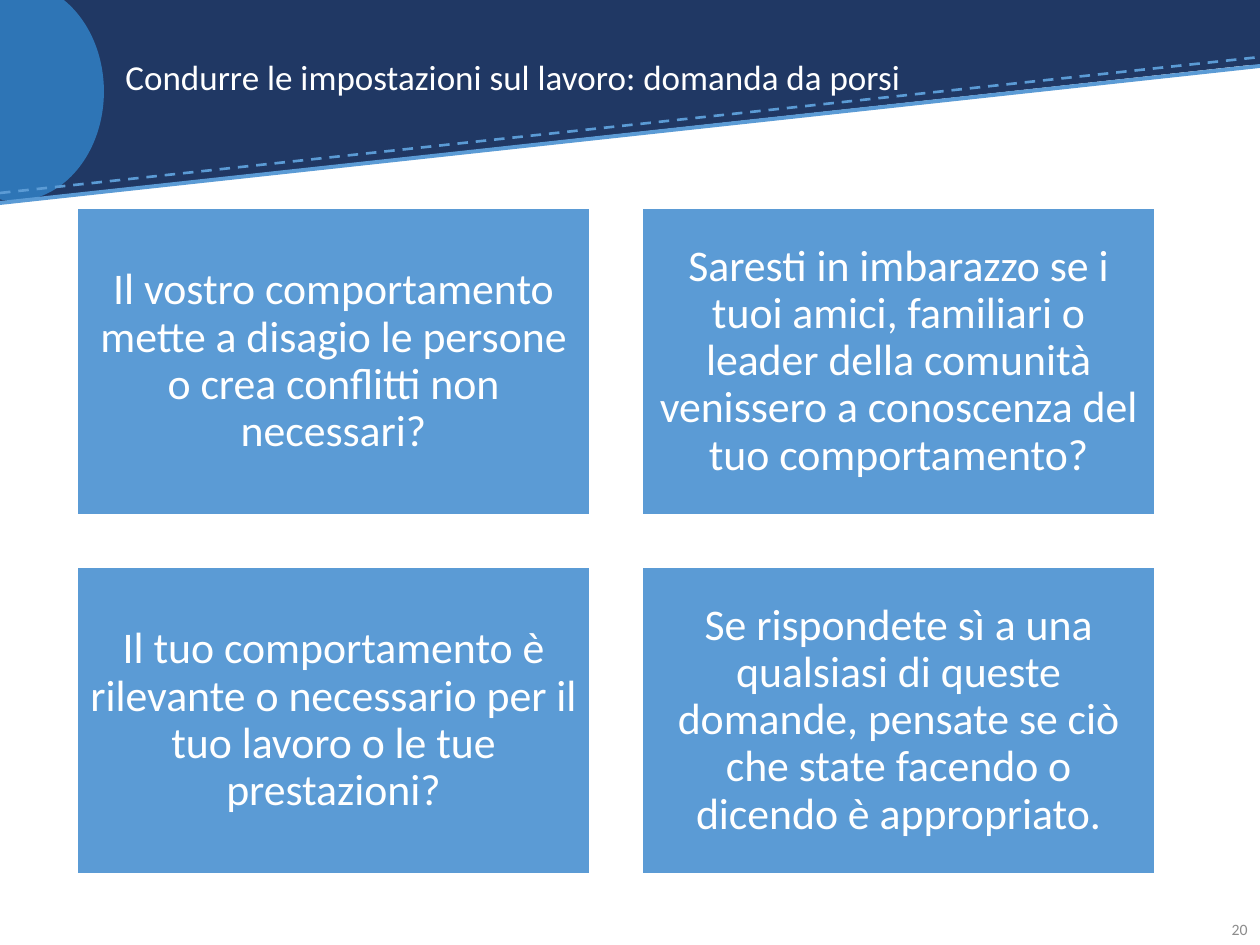
from lxml.etree import SubElement
from pptx import Presentation
from pptx.dml.color import RGBColor
from pptx.enum.dml import MSO_LINE
from pptx.enum.shapes import MSO_CONNECTOR, MSO_SHAPE
from pptx.enum.text import MSO_ANCHOR, PP_ALIGN
from pptx.oxml.ns import qn
from pptx.util import Emu, Pt

PX = 914400 // 126
WIDTH, HEIGHT = 1260, 945

NAVY = RGBColor(0x20, 0x38, 0x64)
BLUE = RGBColor(0x2E, 0x75, 0xB6)
SKY = RGBColor(0x5B, 0x9B, 0xD5)
GRAY = RGBColor(0x8C, 0x8C, 0x8C)
WHITE = RGBColor(0xFF, 0xFF, 0xFF)

TITLE = "Condurre le impostazioni sul lavoro: domanda da porsi"
QUESTIONS = [
    "Il vostro comportamento mette a disagio le persone o crea conflitti non necessari?",
    "Saresti in imbarazzo se i tuoi amici, familiari o leader della comunità "
    "venissero a conoscenza del tuo comportamento?",
    "Il tuo comportamento è rilevante o necessario per il tuo lavoro o le tue prestazioni?",
    "Se rispondete sì a una qualsiasi di queste domande, pensate se ciò che state "
    "facendo o dicendo è appropriato.",
]


def px(*values):
    return [Emu(value * PX) for value in values]


def add_shape(page, kind, frame, fill, outline=None):
    shape = page.shapes.add_shape(kind, *px(*frame))
    shape.shadow.inherit = False
    shape.fill.solid()
    shape.fill.fore_color.rgb = fill
    if outline is None:
        shape.line.fill.background()
    else:
        shape.line.color.rgb = outline
        shape.line.width = Pt(1)
    return shape


def add_line(page, start, end, width, dash=None):
    line = page.shapes.add_connector(MSO_CONNECTOR.STRAIGHT, *px(*start, *end))
    line.line.color.rgb = SKY
    line.line.width = Pt(width)
    if dash is not None:
        line.line.dash_style = dash
    SubElement(line.element.spPr, qn("a:effectLst"))


def write_text(shape, text, *, size, color=WHITE, align=PP_ALIGN.LEFT, spacing=0.9, inset=None):
    frame = shape.text_frame
    frame.word_wrap = True
    frame.vertical_anchor = MSO_ANCHOR.MIDDLE
    if inset is not None:
        frame.margin_left = frame.margin_right = inset
        frame.margin_top = frame.margin_bottom = inset
    para = frame.paragraphs[0]
    para.alignment = align
    para.line_spacing = spacing
    span = para.add_run()
    span.text = text
    span.font.name = "Calibri"
    span.font.size = Pt(size)
    span.font.color.rgb = color


def add_header(page):
    add_shape(page, MSO_SHAPE.RECTANGLE, (0, 0, WIDTH, 65), NAVY)
    wedge = add_shape(page, MSO_SHAPE.RIGHT_TRIANGLE, (0, 64, WIDTH, 138), NAVY)
    wedge.element.spPr.get_or_add_xfrm().set("flipV", "1")
    add_shape(page, MSO_SHAPE.OVAL, (-74, -18, 178, 219), BLUE)
    add_line(page, (0, 193), (WIDTH, 57), 1.5, MSO_LINE.DASH)
    add_line(page, (0, 203), (WIDTH, 66), 2.25)
    box = page.shapes.add_textbox(*px(113, 25, 1014, 108))
    write_text(box, TITLE, size=20)


def add_questions(page):
    left, top, width, height, gap = 77, 208, 513, 307, 52
    for index, question in enumerate(QUESTIONS):
        row, column = divmod(index, 2)
        frame = (left + column * (width + gap), top + row * (height + gap), width, height)
        card = add_shape(page, MSO_SHAPE.RECTANGLE, frame, SKY, outline=WHITE)
        write_text(card, question, size=25, align=PP_ALIGN.CENTER, inset=px(12)[0])


def main():
    deck = Presentation()
    deck.slide_width, deck.slide_height = px(WIDTH, HEIGHT)
    page = deck.slides.add_slide(deck.slide_layouts[6])

    # Slanted header with title
    add_header(page)

    # Page number
    box = page.shapes.add_textbox(*px(1193, 904, 67, 50))
    write_text(box, "20", size=9, color=GRAY, align=PP_ALIGN.RIGHT, spacing=1.0)

    # Two by two grid of questions
    add_questions(page)

    deck.save("out.pptx")


if __name__ == "__main__":
    main()
